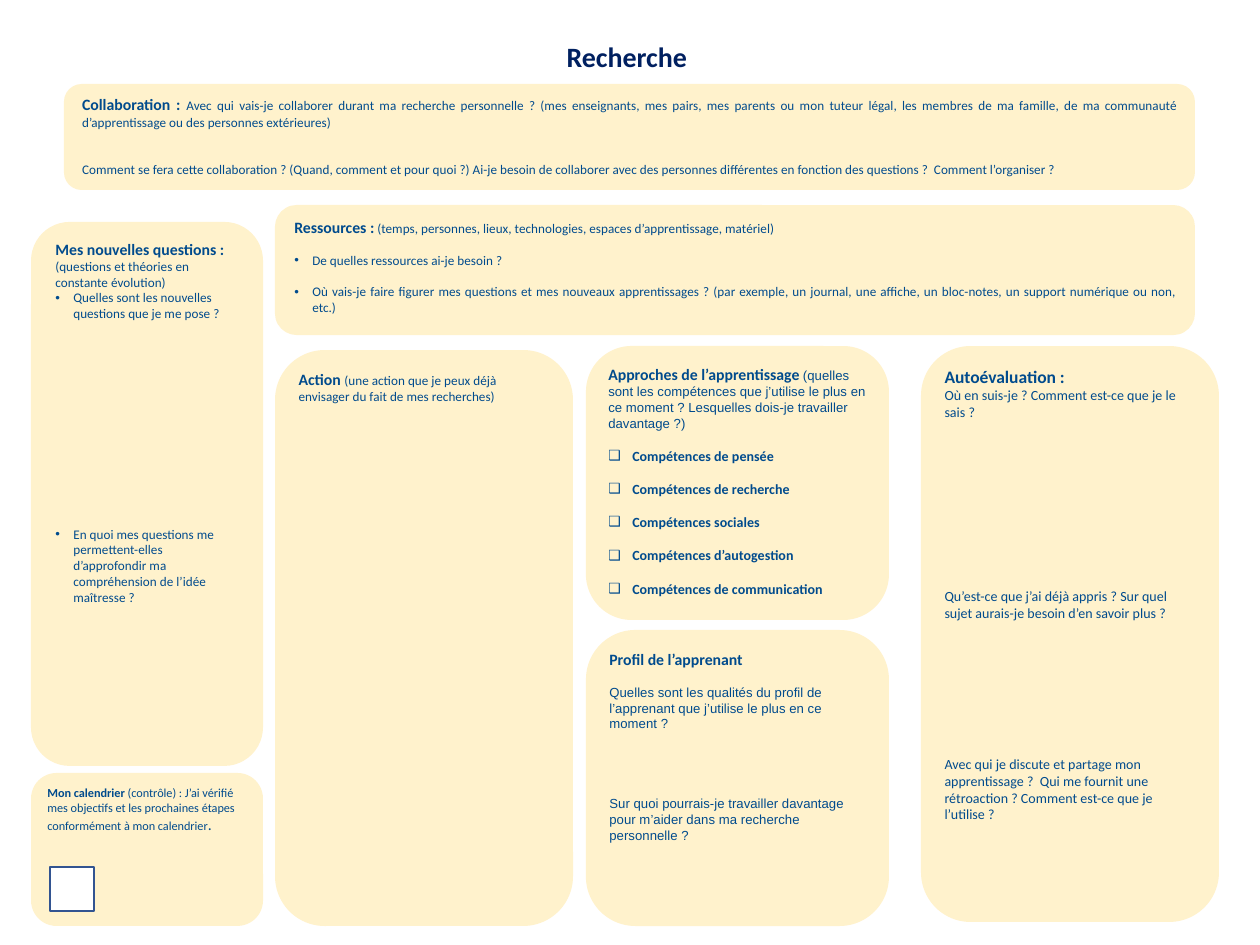
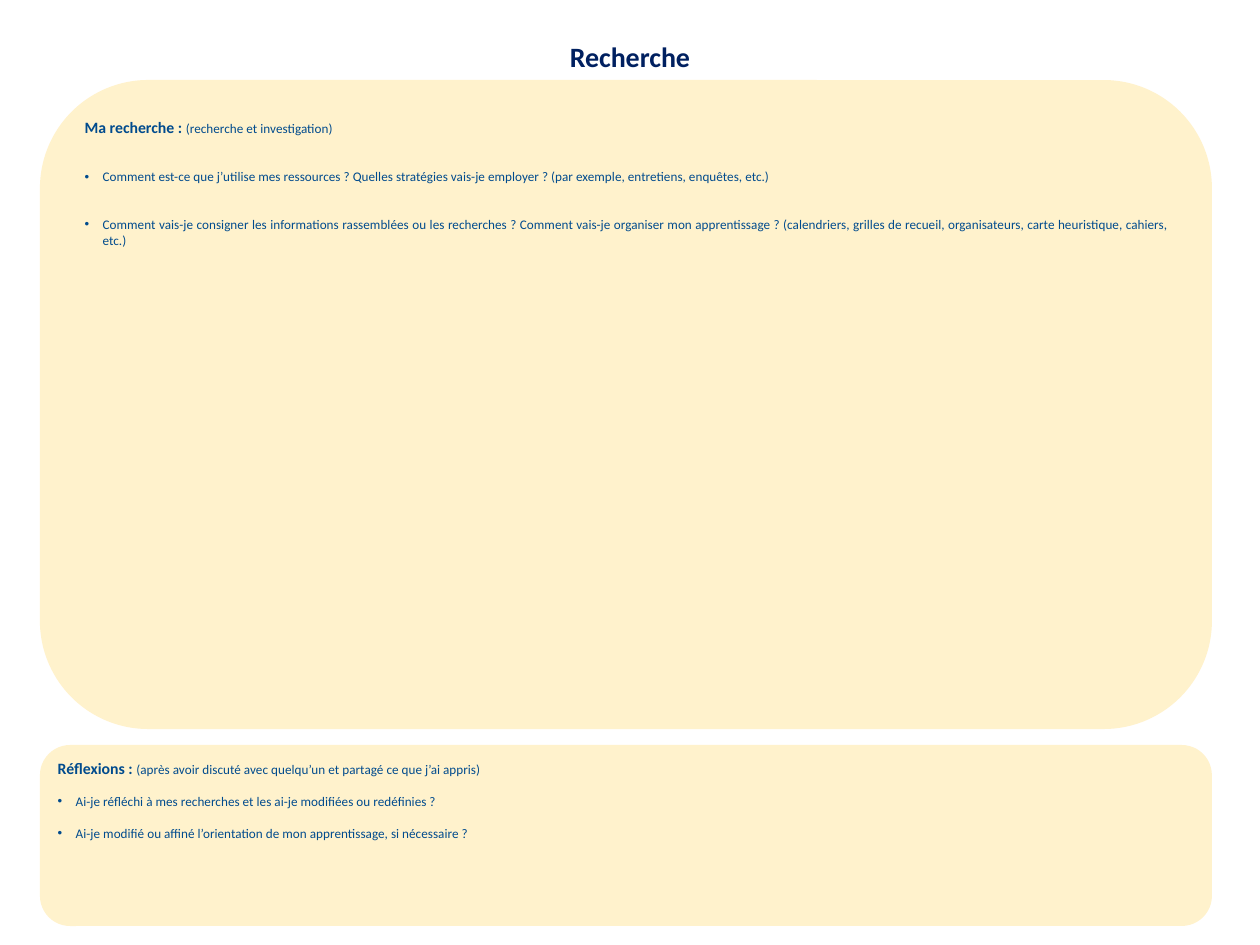
from lxml.etree import SubElement
from pptx import Presentation
from pptx.dml.color import RGBColor
from pptx.enum.shapes import MSO_SHAPE
from pptx.enum.text import MSO_ANCHOR, MSO_AUTO_SIZE, PP_ALIGN
from pptx.oxml.ns import qn
from pptx.util import Emu, Pt

COLORS = {"title": "002060", "text": "004B8D", "panel": "FFF2CC",
          "box": "FFFFFF", "box_line": "325491"}

STYLES = {
    "title": {"size": Pt(16), "bold": True, "name": "Calibri"},
    "large_heading": {"size": Pt(10), "bold": True, "name": "Calibri"},
    "heading": {"size": Pt(9), "bold": True, "name": "Calibri"},
    "skill": {"size": Pt(8), "bold": True, "name": "Calibri"},
    "small_heading": {"size": Pt(7), "bold": True, "name": "Calibri"},
    "stop": {"size": Pt(9), "bold": False, "name": "Calibri"},
    "large_body": {"size": Pt(8), "bold": False, "name": "Calibri"},
    "body": {"size": Pt(7.5), "bold": False, "name": "Calibri"},
    "arial_body": {"size": Pt(7.5), "bold": False, "name": "Arial"},
    "small_body": {"size": Pt(7), "bold": False, "name": "Calibri"},
}

WIDE_INSETS = (13, 6)
TIGHT_INSETS = (9, 5)
INDENTS = {"•": 18, "❑": 24}


def px(count):
    return Emu(round(count * 914400 / 126))


def entry(*runs, gap=0, bullet=None):
    return {"runs": runs, "gap": gap, "bullet": bullet}


def line(text, style="body", gap=0, bullet=None):
    return entry((text, style), gap=gap, bullet=bullet)


class Worksheet:
    def __init__(self):
        self.presentation = Presentation()
        self.presentation.slide_width = px(1260)
        self.presentation.slide_height = px(945)
        self.slide = None

    def add_slide(self, title):
        self.slide = self.presentation.slides.add_slide(self.presentation.slide_layouts[6])
        shape = self.slide.shapes.add_textbox(*map(px, (0, 34, 1260, 47)))
        self.fill_text(shape, [line(title, "title")], WIDE_INSETS, PP_ALIGN.CENTER, "title")
        shape.text_frame.auto_size = MSO_AUTO_SIZE.SHAPE_TO_FIT_TEXT

    def add_shape(self, kind, place, fill):
        shape = self.slide.shapes.add_shape(kind, *map(px, place))
        shape.shadow.inherit = False
        shape.fill.solid()
        shape.fill.fore_color.rgb = RGBColor.from_string(COLORS[fill])
        return shape

    def add_panel(self, place, entries, insets=TIGHT_INSETS, align=PP_ALIGN.LEFT):
        shape = self.add_shape(MSO_SHAPE.ROUNDED_RECTANGLE, place, "panel")
        shape.line.fill.background()
        self.fill_text(shape, entries, insets, align)

    def add_checkbox(self, place):
        shape = self.add_shape(MSO_SHAPE.RECTANGLE, place, "box")
        shape.line.color.rgb = RGBColor.from_string(COLORS["box_line"])
        shape.line.width = Pt(1)

    def fill_text(self, shape, entries, insets, align, color="text"):
        frame = shape.text_frame
        across, down = map(px, insets)
        formats = {"word_wrap": True, "vertical_anchor": MSO_ANCHOR.TOP,
                   "margin_left": across, "margin_right": across,
                   "margin_top": down, "margin_bottom": down}
        for name, value in formats.items():
            setattr(frame, name, value)
        for index, item in enumerate(entries):
            paragraph = frame.add_paragraph() if index else frame.paragraphs[0]
            paragraph.alignment = align
            paragraph.space_before = Pt(item["gap"])
            if item["bullet"]:
                self.add_bullet(paragraph, item["bullet"])
            for text, style in item["runs"]:
                run = paragraph.add_run()
                run.text = text
                run.font.color.rgb = RGBColor.from_string(COLORS[color])
                for name, value in STYLES[style].items():
                    setattr(run.font, name, value)

    def add_bullet(self, paragraph, symbol):
        properties = paragraph._p.get_or_add_pPr()
        indent = px(INDENTS[symbol])
        properties.set("marL", str(indent))
        properties.set("indent", str(-indent))
        SubElement(properties, qn("a:buFont")).set("typeface", "Arial")
        SubElement(properties, qn("a:buChar")).set("char", symbol)


def add_planning_slide(sheet):
    sheet.add_slide("Recherche ")
    sheet.add_panel((64, 84, 1131, 106), [
        entry(("Collaboration : ", "heading"),
              ("Avec qui vais-je collaborer durant ma recherche personnelle ? (mes enseignants, "
               "mes pairs, mes parents ou mon tuteur légal, les membres de ma famille, de ma "
               "communauté d’apprentissage ou des personnes extérieures)", "body")),
        line("Comment se fera cette collaboration ? (Quand, comment et pour quoi ?) Ai-je besoin "
             "de collaborer avec des personnes différentes en fonction des questions ?  "
             "Comment l’organiser ?", gap=18),
    ], WIDE_INSETS, PP_ALIGN.JUSTIFY)
    sheet.add_panel((31, 222, 232, 544), [
        line("Mes nouvelles questions :", "heading"),
        line("(questions et théories en constante évolution)"),
        line("Quelles sont les nouvelles questions que je me pose ?", bullet="•"),
        line("En quoi mes questions me permettent-elles d’approfondir ma compréhension de "
             "l’idée maîtresse ?", gap=117, bullet="•"),
    ], WIDE_INSETS)
    sheet.add_panel((275, 205, 920, 130), [
        entry(("Ressources :", "heading"),
              (" (temps, personnes, lieux, technologies, espaces d’apprentissage, matériel)",
               "body")),
        line("De quelles ressources ai-je besoin ?", gap=9, bullet="•"),
        line("Où vais-je faire figurer mes questions et mes nouveaux apprentissages ? (par "
             "exemple, un journal, une affiche, un bloc-notes, un support numérique ou non, etc.)",
             gap=9, bullet="•"),
    ], WIDE_INSETS, PP_ALIGN.JUSTIFY)
    sheet.add_panel((31, 773, 232, 153), [
        entry(("Mon calendrier ", "small_heading"),
              ("(contrôle) : J’ai vérifié mes objectifs et les prochaines étapes conformément "
               "à mon calendrier", "small_body"),
              (".", "stop")),
    ])
    sheet.add_panel((275, 350, 298, 576), [
        entry(("Action ", "heading"),
              ("(une action que je peux déjà envisager du fait de mes recherches)", "body")),
    ])
    skills = ("de pensée", "de recherche", "sociales", "d’autogestion", "de communication")
    sheet.add_panel((586, 346, 303, 274), [
        entry(("Approches de l’apprentissage ", "heading"),
              ("(quelles sont les compétences que j’utilise le plus en ce moment ? Lesquelles "
               "dois-je travailler davantage ?)", "arial_body")),
        *[line(f"Compétences {skill}", "skill", 9.4, "❑") for skill in skills],
    ])
    sheet.add_panel((586, 630, 303, 296), [
        line("Profil de l’apprenant", "heading"),
        line("Quelles sont les qualités du profil de l’apprenant que j’utilise le plus en ce "
             "moment ?", "arial_body", 9),
        line("Sur quoi pourrais-je travailler davantage pour m’aider dans ma recherche "
             "personnelle ?", "arial_body", 36.5),
    ])
    sheet.add_panel((921, 346, 298, 576), [
        line("Autoévaluation :", "large_heading"),
        line("Où en suis-je ? Comment est-ce que je le sais ?", "large_body"),
        line("Qu’est-ce que j’ai déjà appris ? Sur quel sujet aurais-je besoin d’en savoir "
             "plus ?", "large_body", 95.7),
        line("Avec qui je discute et partage mon apprentissage ?  Qui me fournit une "
             "rétroaction ? Comment est-ce que je l’utilise ?", "large_body", 76.8),
    ])
    sheet.add_checkbox((50, 867, 44, 44))


def add_research_slide(sheet):
    sheet.add_slide("Recherche")
    sheet.add_panel((40, 80, 1172, 649), [
        entry(("Ma recherche : ", "heading"), ("(recherche et investigation)", "body")),
        line("Comment est-ce que j’utilise mes ressources ? Quelles stratégies vais-je "
             "employer ? (par exemple, entretiens, enquêtes, etc.)", gap=18.3, bullet="•"),
        line("Comment vais-je consigner les informations rassemblées ou les recherches ? Comment "
             "vais-je organiser mon apprentissage ? (calendriers, grilles de recueil, "
             "organisateurs, carte heuristique, cahiers, etc.)", gap=18.3, bullet="•"),
    ], WIDE_INSETS, PP_ALIGN.JUSTIFY)
    sheet.add_panel((40, 745, 1172, 181), [
        entry(("Réflexions : ", "heading"),
              ("(après avoir discuté avec quelqu’un et partagé ce que j’ai appris)", "body")),
        line("Ai-je réfléchi à mes recherches et les ai-je modifiées ou redéfinies ?",
             gap=9, bullet="•"),
        line("Ai-je modifié ou affiné l’orientation de mon apprentissage, si nécessaire ?",
             gap=9, bullet="•"),
    ], align=PP_ALIGN.JUSTIFY)


def main():
    sheet = Worksheet()
    add_planning_slide(sheet)
    add_research_slide(sheet)
    sheet.presentation.save("out.pptx")


if __name__ == "__main__":
    main()
